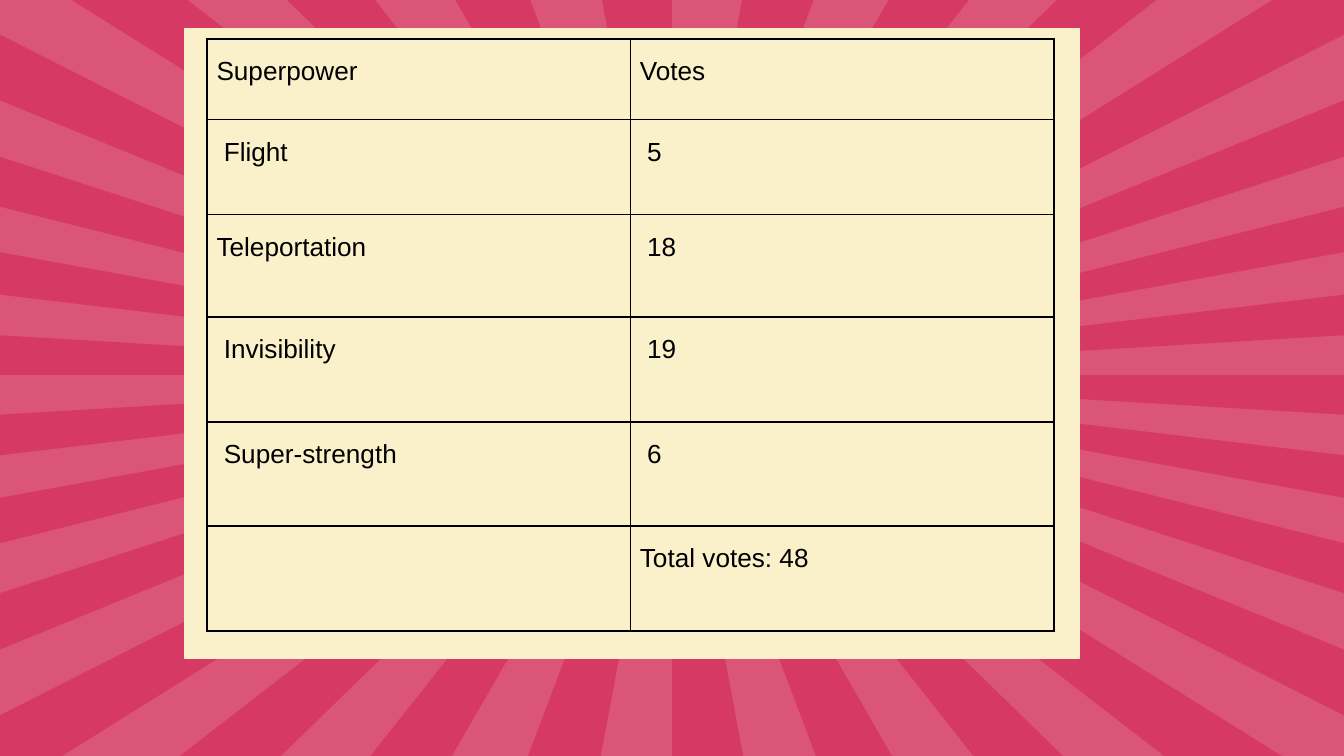
import math
from dataclasses import dataclass

from lxml import etree
from pptx import Presentation
from pptx.dml.color import RGBColor
from pptx.enum import shapes, text
from pptx.oxml import ns
from pptx.util import Pt


@dataclass(frozen=True)
class Theme:
    backdrop: str = "DB5579"
    ray: str = "D63A64"
    card: str = "FAF0CA"
    ink: str = "000000"
    font: str = "Arial"
    body_size: float = 14
    border: float = 1


theme = Theme()

CENTER_X, CENTER_Y = 360, 200.9
HALF_W, HALF_H = 365, 207.4
ASPECT = 9 / 16
RAY_COUNT = 30


def rim_point(degrees):
    """Offset from the centre to the frame, along a flattened circle's angle."""
    dx = math.cos(math.radians(degrees))
    dy = math.sin(math.radians(degrees)) * ASPECT
    reach = 1 / max(abs(dx) / HALF_W, abs(dy) / HALF_H)
    return dx * reach, dy * reach


def add_border(cell, side):
    line = etree.SubElement(cell._tc.get_or_add_tcPr(), ns.qn(f"a:{side}"),
                            w=str(Pt(theme.border)))
    fill = etree.SubElement(line, ns.qn("a:solidFill"))
    etree.SubElement(fill, ns.qn("a:srgbClr"), val=theme.ink)


deck = Presentation()
deck.slide_width, deck.slide_height = Pt(720), Pt(405)
slide = deck.slides.add_slide(deck.slide_layouts[6])

# Backdrop with a sunburst: every second sector is a darker ray
slide.background.fill.solid()
slide.background.fill.fore_color.rgb = RGBColor.from_string(theme.backdrop)

step = 360 / RAY_COUNT
for index in range(RAY_COUNT):
    first = rim_point(index * step)
    last = rim_point((index + 0.5) * step)
    rim = [first, last]
    # A ray that ends on two edges also takes in the corner between them
    first_on_side = math.isclose(abs(first[0]), HALF_W)
    last_on_side = math.isclose(abs(last[0]), HALF_W)
    if first_on_side != last_on_side:
        rim.insert(1, (math.copysign(HALF_W, first[0]), math.copysign(HALF_H, first[1])))

    outline = slide.shapes.build_freeform(Pt(CENTER_X), Pt(CENTER_Y))
    outline.add_line_segments([(Pt(CENTER_X + dx), Pt(CENTER_Y + dy)) for dx, dy in rim])
    ray = outline.convert_to_shape()
    ray.shadow.inherit = False
    ray.fill.solid()
    ray.fill.fore_color.rgb = RGBColor.from_string(theme.ray)
    ray.line.fill.background()

# Cream card behind the table
card = slide.shapes.add_shape(shapes.MSO_SHAPE.RECTANGLE, Pt(99), Pt(15.5), Pt(479.5), Pt(337))
card.shadow.inherit = False
card.fill.solid()
card.fill.fore_color.rgb = RGBColor.from_string(theme.card)
card.line.color.rgb = RGBColor.from_string(theme.card)
card.line.width = Pt(0.75)

# Vote table
votes = [
    ("Superpower", "Votes"),
    (" Flight", " 5"),
    ("Teleportation", " 18"),
    (" Invisibility", " 19"),
    (" Super-strength", " 6"),
    ("", "Total votes: 48"),
]
row_heights = [43, 51, 55, 56, 56, 56]

vote_table = slide.shapes.add_table(len(votes), 2, Pt(111), Pt(21), Pt(453.6),
                                    Pt(sum(row_heights))).table
vote_table.first_row = False
vote_table.horz_banding = False
for column in vote_table.columns:
    column.width = Pt(226.8)

for row, height, entries in zip(vote_table.rows, row_heights, votes):
    row.height = Pt(height)
    for cell, entry in zip(row.cells, entries):
        cell.margin_left = cell.margin_right = Pt(5)
        cell.margin_top = cell.margin_bottom = Pt(7.2)
        cell.vertical_anchor = text.MSO_ANCHOR.TOP
        for side in ("lnL", "lnR", "lnT", "lnB"):
            add_border(cell, side)
        cell.fill.background()
        if entry:
            paragraph = cell.text_frame.paragraphs[0]
            paragraph.line_spacing = 1.15
            run = paragraph.add_run()
            run.text = entry
            run.font.name = theme.font
            run.font.size = Pt(theme.body_size)
            run.font.color.rgb = RGBColor.from_string(theme.ink)

deck.save("out.pptx")
